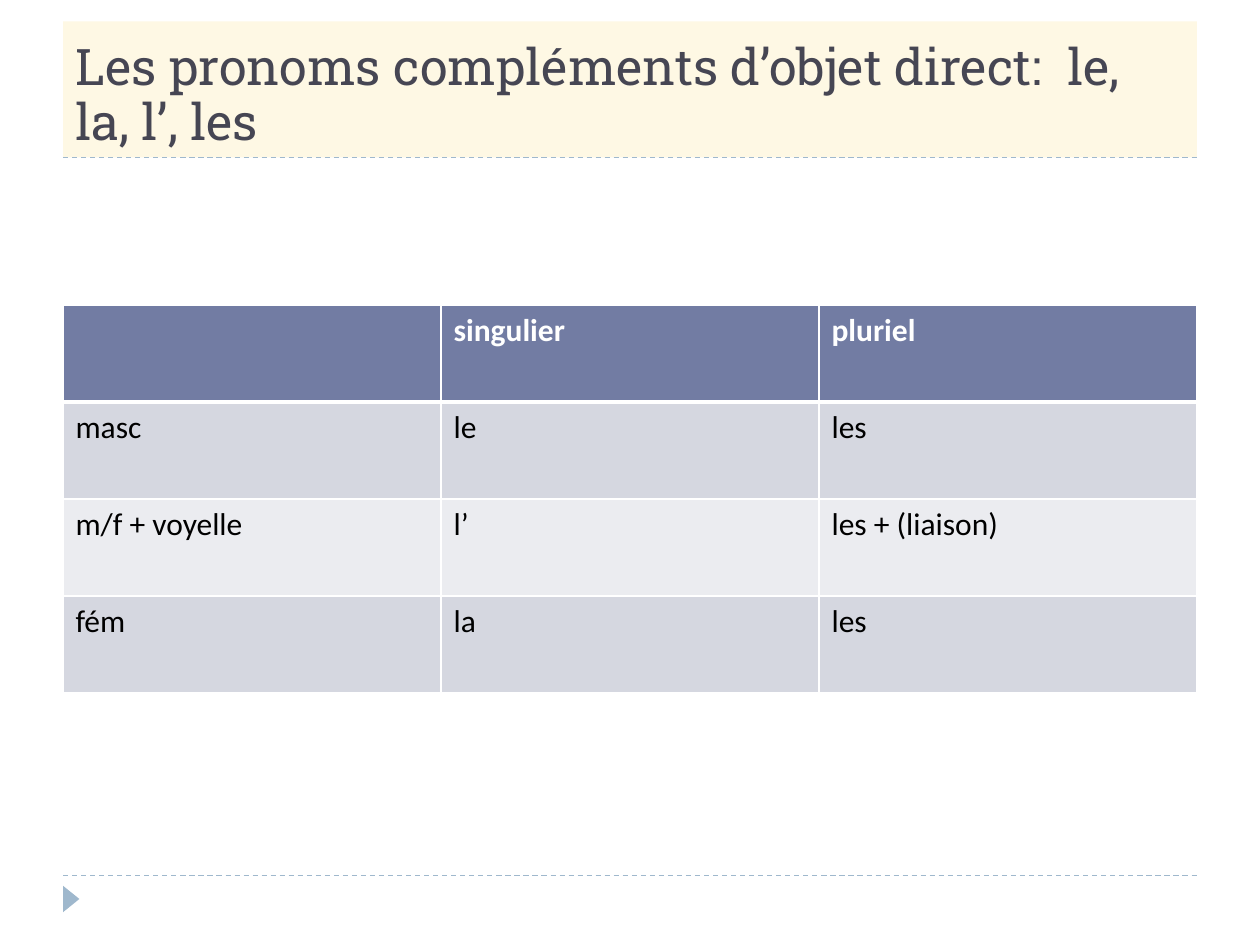
from dataclasses import dataclass

from lxml import etree
from pptx import Presentation
from pptx.dml.color import RGBColor
from pptx.enum.dml import MSO_LINE_DASH_STYLE
from pptx.enum.shapes import MSO_CONNECTOR_TYPE, MSO_SHAPE
from pptx.enum.text import MSO_ANCHOR, MSO_AUTO_SIZE, PP_ALIGN
from pptx.oxml.ns import qn
from pptx.util import Inches, Pt

DASH = MSO_LINE_DASH_STYLE.DASH
STRAIGHT = MSO_CONNECTOR_TYPE.STRAIGHT
TRIANGLE = MSO_SHAPE.ISOSCELES_TRIANGLE
BOTTOM = MSO_ANCHOR.BOTTOM
NO_AUTOFIT = MSO_AUTO_SIZE.NONE
LEFT = PP_ALIGN.LEFT
TITLE_ONLY = 5
BORDER_SIDES = ("L", "R", "T", "B")


@dataclass(frozen=True)
class Theme:
    title_font: str = "Roboto Slab"
    body_font: str = "Calibri"
    title_size: float = 28.8
    body_size: float = 18
    title_text: str = "464653"
    title_fill: str = "FEF8E4"
    accent: str = "9FB8CD"
    header_fill: str = "727CA3"
    header_text: str = "FFFFFF"
    body_text: str = "000000"
    bands: tuple = ("D5D7E0", "EBECF0")
    border: str = "FFFFFF"
    border_width: float = 1
    header_border_width: float = 3
    rule_width: float = 0.75


def write_text(text_frame, text, *, font, size, color, bold=False, line_spacing=None):
    paragraph = text_frame.paragraphs[0]
    paragraph.alignment = LEFT
    paragraph.line_spacing = line_spacing
    run = paragraph.add_run()
    run.text = text
    run.font.name = font
    run.font.size = Pt(size)
    run.font.bold = bold
    run.font.color.rgb = RGBColor.from_string(color)


def paint(fill, color):
    fill.solid()
    fill.fore_color.rgb = RGBColor.from_string(color)


class SlideBuilder:
    def __init__(self, slide, theme):
        self.slide = slide
        self.theme = theme

    def title(self, text, left, top, width, height):
        theme = self.theme
        shape = self.slide.shapes.title
        shape.left, shape.top = Inches(left), Inches(top)
        shape.width, shape.height = Inches(width), Inches(height)
        paint(shape.fill, theme.title_fill)
        text_frame = shape.text_frame
        text_frame.auto_size = NO_AUTOFIT
        text_frame.word_wrap = True
        text_frame.vertical_anchor = BOTTOM
        write_text(text_frame, text, font=theme.title_font, size=theme.title_size,
                   color=theme.title_text, line_spacing=0.9)

    def dashed_rule(self, left, top, width):
        connector = self.slide.shapes.add_connector(
            STRAIGHT, Inches(left), Inches(top), Inches(left + width), Inches(top))
        connector.line.color.rgb = RGBColor.from_string(self.theme.accent)
        connector.line.width = Pt(self.theme.rule_width)
        connector.line.dash_style = DASH
        properties = connector._element.find(qn("p:spPr"))
        etree.SubElement(properties, qn("a:effectLst"))

    def marker(self, left, top, width, height):
        shape = self.slide.shapes.add_shape(
            TRIANGLE, Inches(left), Inches(top), Inches(width), Inches(height))
        shape.rotation = 90
        shape.shadow.inherit = False
        paint(shape.fill, self.theme.accent)
        shape.line.fill.background()

    def cell_borders(self, cell, widths):
        properties = cell._tc.get_or_add_tcPr()
        for index, side in enumerate(BORDER_SIDES):
            line = etree.Element(qn(f"a:ln{side}"), w=str(Pt(widths[side])))
            fill = etree.SubElement(line, qn("a:solidFill"))
            etree.SubElement(fill, qn("a:srgbClr"), val=self.theme.border)
            properties.insert(index, line)

    def table(self, rows, left, top, width, height):
        theme = self.theme
        table = self.slide.shapes.add_table(
            len(rows), len(rows[0]), Inches(left), Inches(top),
            Inches(width), Inches(height)).table
        for row_index, row in enumerate(rows):
            is_header = row_index == 0
            band = theme.bands[(row_index - 1) % len(theme.bands)]
            widths = dict.fromkeys(BORDER_SIDES, theme.border_width)
            if is_header:
                widths["B"] = theme.header_border_width
            elif row_index == 1:
                widths["T"] = theme.header_border_width
            for column_index, text in enumerate(row):
                cell = table.cell(row_index, column_index)
                paint(cell.fill, theme.header_fill if is_header else band)
                self.cell_borders(cell, widths)
                if text:
                    write_text(cell.text_frame, text, font=theme.body_font,
                               size=theme.body_size, bold=is_header,
                               color=theme.header_text if is_header else theme.body_text)


def main():
    presentation = Presentation()
    presentation.slide_width = Inches(10)
    presentation.slide_height = Inches(7.5)
    slide = presentation.slides.add_slide(presentation.slide_layouts[TITLE_ONLY])
    builder = SlideBuilder(slide, Theme())

    margin, content_width = 0.5, 9
    builder.title("Les pronoms compléments d’objet direct:  le, la, l’, les",
                  margin, 0.17, content_width, 1.08)
    for rule_top in (1.25, 6.95):
        builder.dashed_rule(margin, rule_top, content_width)
    builder.marker(0.46, 7.07, 0.21, 0.13)
    pronouns = [
        ("", "singulier", "pluriel"),
        ("masc", "le", "les"),
        ("m/f + voyelle", "l’", "les + (liaison)"),
        ("fém", "la", "les"),
    ]
    builder.table(pronouns, margin, 2.42, content_width, 3.08)
    presentation.save("out.pptx")


if __name__ == "__main__":
    main()
